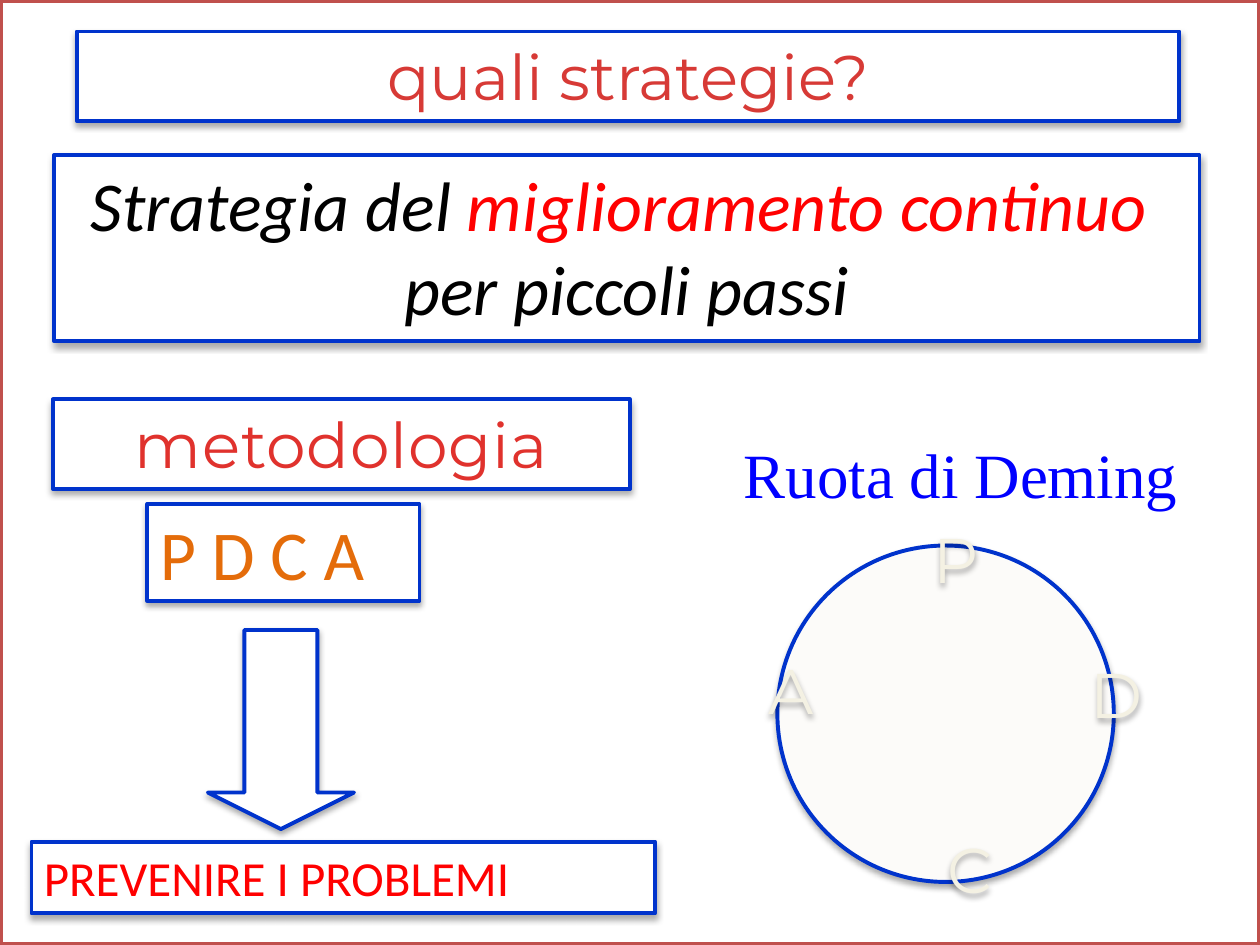
from typing import NamedTuple

from lxml import etree
from pptx import Presentation
from pptx.dml.color import RGBColor
from pptx.enum import shapes, text
from pptx.oxml import ns
from pptx.util import Inches, Pt

BLUE, WHITE, RED, BLACK = "0033CC", "FFFFFF", "FF0000", "000000"
KIND, ALIGN = shapes.MSO_SHAPE, text.PP_ALIGN


class Area(NamedTuple):
    left: float
    top: float
    width: float
    height: float


class Style(NamedTuple):
    font: str
    size: int
    color: str = BLACK
    align: ALIGN = ALIGN.CENTER
    italic: bool = False
    track: int = 0


class Part(NamedTuple):
    words: str
    color: str | None = None


class Box(NamedTuple):
    area: Area
    style: Style
    lines: list[list[Part]]


class Letter(NamedTuple):
    word: str
    left: float
    top: float
    width: float = 0.39


BOXES = [
    Box(Area(0.61, 0.25, 8.75, 0.71), Style("Montserrat", 36, "D73A36"),
        [[Part("quali strategie?")]]),
    Box(Area(0.43, 1.23, 9.09, 1.48), Style("Calibri", 40, italic=True),
        [[Part("Strategia del "), Part("miglioramento continuo ", RED)],
         [Part("per piccoli passi")]]),
    Box(Area(0.42, 3.17, 4.58, 0.71),
        Style("Montserrat", 36, "E0322D", track=50),
        [[Part("metodologia")]]),
    Box(Area(1.17, 4, 2.16, 0.77),
        Style("Calibri", 40, "E46C0A", ALIGN.LEFT), [[Part("P D C A")]]),
    Box(Area(0.25, 6.68, 4.95, 0.57),
        Style("Calibri", 28, RED, ALIGN.LEFT),
        [[Part("PREVENIRE I PROBLEMI")]]),
]
WHEEL = [
    Letter("A", 6, 5.12),
    Letter("P", 7.31, 4.08, 0.36),
    Letter("D", 8.56, 5.15),
    Letter("C", 7.42, 6.54),
]


def paint(target, color: str) -> None:
    """Give a fill or a line one solid colour."""
    target.solid()
    target.fore_color.rgb = RGBColor.from_string(color)


def shade(shape) -> None:
    """Add a soft shadow straight below the shape."""
    shape.shadow.inherit = False
    effects = shape._element.spPr.find(ns.qn("a:effectLst"))
    outer = etree.SubElement(effects, ns.qn("a:outerShdw"),
                             blurRad=str(Pt(3.5)), dist=str(Pt(2.2)),
                             dir="5400000", rotWithShape="0")
    tint = etree.SubElement(outer, ns.qn("a:srgbClr"), val=BLACK)
    etree.SubElement(tint, ns.qn("a:alpha"), val="32000")


def draw(slide, kind: KIND, area: Area, fill: str = WHITE):
    """Draw a blue-edged shape with a shadow."""
    shape = slide.shapes.add_shape(kind, *map(Inches, area))
    paint(shape.fill, fill)
    paint(shape.line.fill, BLUE)
    shape.line.width = Pt(2.25)
    shade(shape)
    return shape


def write(shape, style: Style, lines: list[list[Part]],
          wrap: bool = True) -> None:
    frame = shape.text_frame
    frame.word_wrap = wrap
    frame.vertical_anchor = text.MSO_ANCHOR.TOP
    for i, parts in enumerate(lines):
        para = frame.add_paragraph() if i else frame.paragraphs[0]
        para.alignment = style.align
        font = para.font
        font.name, font.size = style.font, Pt(style.size)
        font.italic = style.italic
        if len(parts) == 1:
            paint(font.fill, style.color)
        for part in parts:
            run = para.add_run()
            run.text = part.words
            # Shapes bring a white run colour, so each run states its own.
            paint(run.font.fill, part.color or style.color)
            if style.track:
                run._r.get_or_add_rPr().set("spc", str(style.track))


def label(slide, area: Area, style: Style, words: str, wrap: bool = True):
    box = slide.shapes.add_textbox(*map(Inches, area))
    write(box, style, [[Part(words)]], wrap)
    return box


def main() -> None:
    deck = Presentation()
    deck.slide_width, deck.slide_height = Inches(10), Inches(7.5)
    slide = deck.slides.add_slide(deck.slide_layouts[6])

    frame = slide.shapes.add_shape(KIND.RECTANGLE, 0, 0, deck.slide_width,
                                   deck.slide_height)
    frame.fill.background()
    paint(frame.line.fill, "C0504D")
    frame.line.width = Pt(3)
    frame.shadow.inherit = False

    for box in BOXES:
        shape = draw(slide, KIND.RECTANGLE, box.area)
        write(shape, box.style, box.lines)

    arrow = draw(slide, KIND.DOWN_ARROW, Area(1.65, 5, 1.16, 1.58))
    arrow.adjustments[0], arrow.adjustments[1] = 0.5, 0.25

    draw(slide, KIND.OVAL, Area(6.17, 4.33, 2.67, 2.67), "FCFBF9")
    pale = Style("Montserrat", 36, "F4F1E3")
    for item in WHEEL:
        area = Area(item.left, item.top, item.width, 0.71)
        shade(label(slide, area, pale, item.word, wrap=False))
    label(slide, Area(5.25, 3.41, 4.75, 2.26),
          Style("Times New Roman", 36, "0000FF"), "Ruota di Deming")

    deck.save("out.pptx")


if __name__ == "__main__":
    main()
